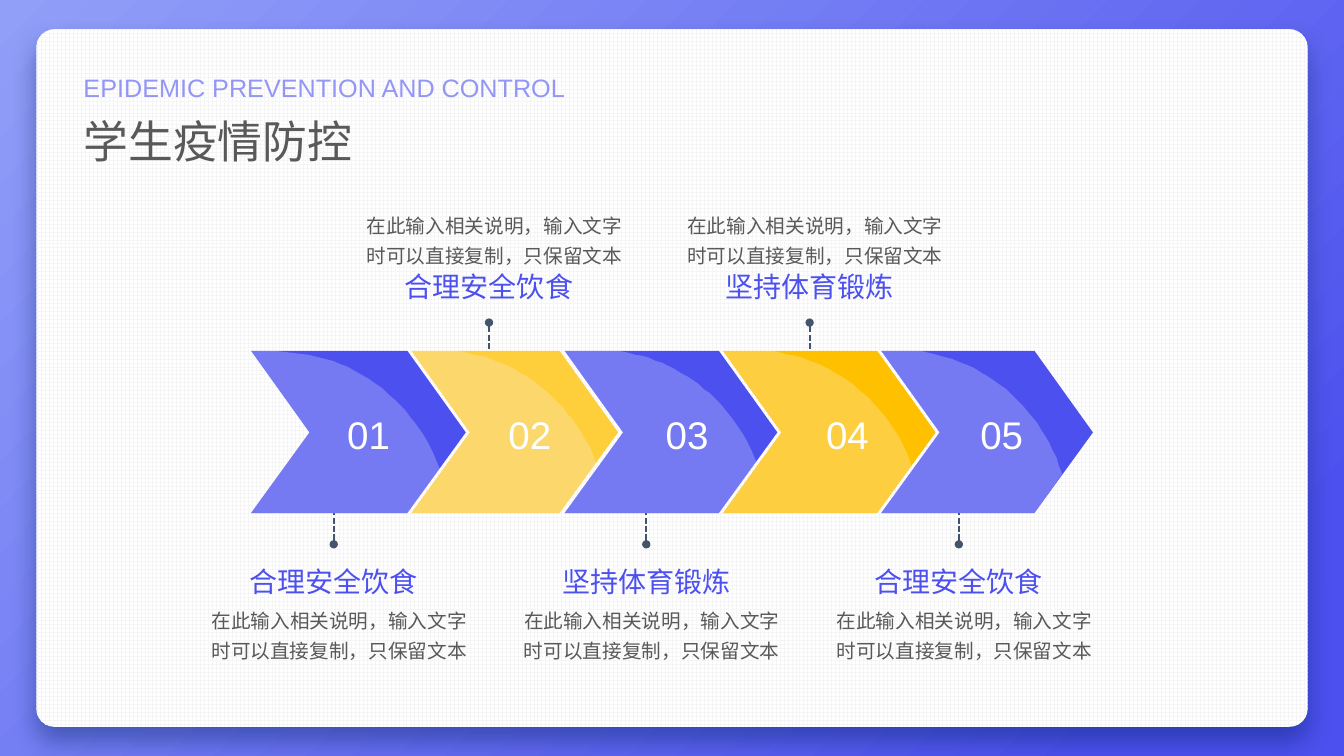
import pptx
import pptx.util
import pptx.oxml
import pptx.oxml.ns
import pptx.dml.color
import pptx.enum.dml
import pptx.enum.shapes
import pptx.enum.text

PX = 9144  # EMU per px, 100 px to the inch
COLORS = {
    "sky": "929FF8", "indigo": "4C50EE", "lilac": "9496F5",
    "grid": "F5F5F5", "white": "FFFFFF", "gloss": "F7F9FF",
    "yellow": "FFCE3B", "amber": "FFC000",
    "slate": "44546A", "gray": "595959", "navy": "002060",
}
ALIGN = pptx.enum.text.PP_ALIGN
qn = pptx.oxml.ns.qn
nsdecls = pptx.oxml.ns.nsdecls


def rgb(name):
    return pptx.dml.color.RGBColor.from_string(COLORS[name])


def add_text(left, top, width, height, text, size, color, align, spacing=None, insets=(10, 5)):
    box = page.shapes.add_textbox(left * PX, top * PX, width * PX, height * PX)
    frame = box.text_frame
    frame.word_wrap = True
    frame.margin_left = frame.margin_right = insets[0] * PX
    frame.margin_top = frame.margin_bottom = insets[1] * PX
    para = frame.paragraphs[0]
    para.alignment = align
    if spacing:
        para.line_spacing = spacing
    span = para.add_run()
    span.text = text
    span.font.size = pptx.util.Pt(size)
    span.font.name = "Arial"
    span.font.color.rgb = rgb(color)


deck = pptx.Presentation()
deck.slide_width = 1333 * PX
deck.slide_height = 750 * PX
page = deck.slides.add_slide(deck.slide_layouts[6])

# Background gradient
back = page.background.fill
back.gradient()
back.gradient_angle = 315
for stop, (color, position) in zip(back.gradient_stops, [("sky", 0), ("indigo", 0.88)]):
    stop.color.rgb = rgb(color)
    stop.position = position

# White card with a fine grid and a soft shadow
card = page.shapes.add_shape(
    pptx.enum.shapes.MSO_SHAPE.ROUNDED_RECTANGLE, 36 * PX, 29 * PX, 1261 * PX, 692 * PX)
card.adjustments[0] = 0.026
card.fill.patterned()
card.fill.pattern = pptx.enum.dml.MSO_PATTERN.LARGE_GRID
card.fill.fore_color.rgb = rgb("grid")
card.fill.back_color.rgb = rgb("white")
card.line.fill.background()
card.shadow.inherit = False
card._element.spPr.find(qn("a:effectLst")).append(pptx.oxml.parse_xml(
    f'<a:outerShdw {nsdecls("a")} blurRad="{17 * 12700}" dist="{11 * 12700}" dir="5400000">'
    f'<a:srgbClr val="{COLORS["navy"]}"><a:alpha val="40000"/></a:srgbClr></a:outerShdw>'))

# Notes: centre x, heading, whether above the arrows
NOTE = "在此输入相关说明，输入文字时可以直接复制，只保留文本"
notes = [
    (331, "合理安全饮食", False),
    (641, "坚持体育锻炼", False),
    (951, "合理安全饮食", False),
    (485, "合理安全饮食", True),
    (803, "坚持体育锻炼", True),
]
for center, heading, above in notes:
    dot_y, end_y, note_y, heading_y = (320, 367, 200, 262) if above else (540, 494, 592, 555)
    stem = page.shapes.add_connector(
        pptx.enum.shapes.MSO_CONNECTOR.STRAIGHT,
        center * PX, dot_y * PX, center * PX, end_y * PX)
    stem.line.color.rgb = rgb("slate")
    stem.line.width = pptx.util.Pt(1.5)
    stem.line.dash_style = pptx.enum.dml.MSO_LINE.SQUARE_DOT
    stem.line._ln.append(pptx.oxml.parse_xml(f'<a:headEnd {nsdecls("a")} type="oval"/>'))
    stem._element.spPr.append(pptx.oxml.parse_xml(f'<a:effectLst {nsdecls("a")}/>'))
    add_text(center - 142, note_y, 284, 68, NOTE, 14, "gray", ALIGN.RIGHT, 1.3)
    add_text(center - 134, heading_y, 268, 44, heading, 20, "indigo", ALIGN.CENTER)

# Arrows: left, shoulder, colour, gloss top end, gloss curve, gloss tip, number left
TOP, MIDDLE, BOTTOM, POINT = 348, 429, 509, 58
arrows = [
    (249, 404, "indigo", 272, [(281, 349), (349, 352), (407, 395), (432, 455)], (436, 465), 335),
    (408, 555, "yellow", 455, [(463, 350), (520, 361), (566, 400), (589, 453)], (591, 460), 495),
    (560, 713, "indigo", 614, [(623, 350), (679, 361), (726, 400), (748, 453)], (750, 458), 651),
    (717, 870, "amber", 767, [(775, 350), (832, 361), (879, 400), (901, 453)], (904, 462), 810),
    (874, 1026, "indigo", 913, [(921, 350), (984, 362), (1034, 409), (1053, 469)], (1053, 471), 963),
]
STEPS = 24
for number, (left, shoulder, color, gloss_top, curve, tip, number_left) in enumerate(arrows, 1):
    arc = []
    for step in range(STEPS + 1):
        t = step / STEPS
        weights = [(1 - t) ** 3, 3 * t * (1 - t) ** 2, 3 * t ** 2 * (1 - t), t ** 3]
        arc.append(tuple(sum(w * point[axis] for w, point in zip(weights, curve))
                         for axis in (0, 1)))
    tail = [(shoulder, BOTTOM), (left, BOTTOM), (left + POINT, MIDDLE)]
    body = [(shoulder, TOP), (shoulder + POINT, MIDDLE)] + tail
    gloss = [(gloss_top, TOP)] + arc + [tip] + tail
    for outline, fill in [(body, color), (gloss, "gloss")]:
        builder = page.shapes.build_freeform(left, TOP, scale=PX)
        builder.add_line_segments(outline, close=True)
        chevron = builder.convert_to_shape()
        chevron.shadow.inherit = False
        chevron.fill.solid()
        chevron.fill.fore_color.rgb = rgb(fill)
        chevron.line.fill.background()
        if fill == "gloss":
            tint = chevron._element.spPr.find(qn("a:solidFill"))[0]
            tint.append(pptx.oxml.parse_xml(f'<a:alpha {nsdecls("a")} val="25000"/>'))
    add_text(number_left, 405, 61, 61, f"{number:02d}", 27.5, "white", ALIGN.CENTER, insets=(0, 3))

# Titles
add_text(73, 108, 426, 64, "学生疫情防控", 32, "gray", ALIGN.LEFT)
add_text(73, 67, 640, 40, "EPIDEMIC PREVENTION AND CONTROL", 18, "lilac", ALIGN.LEFT)

deck.save("out.pptx")
